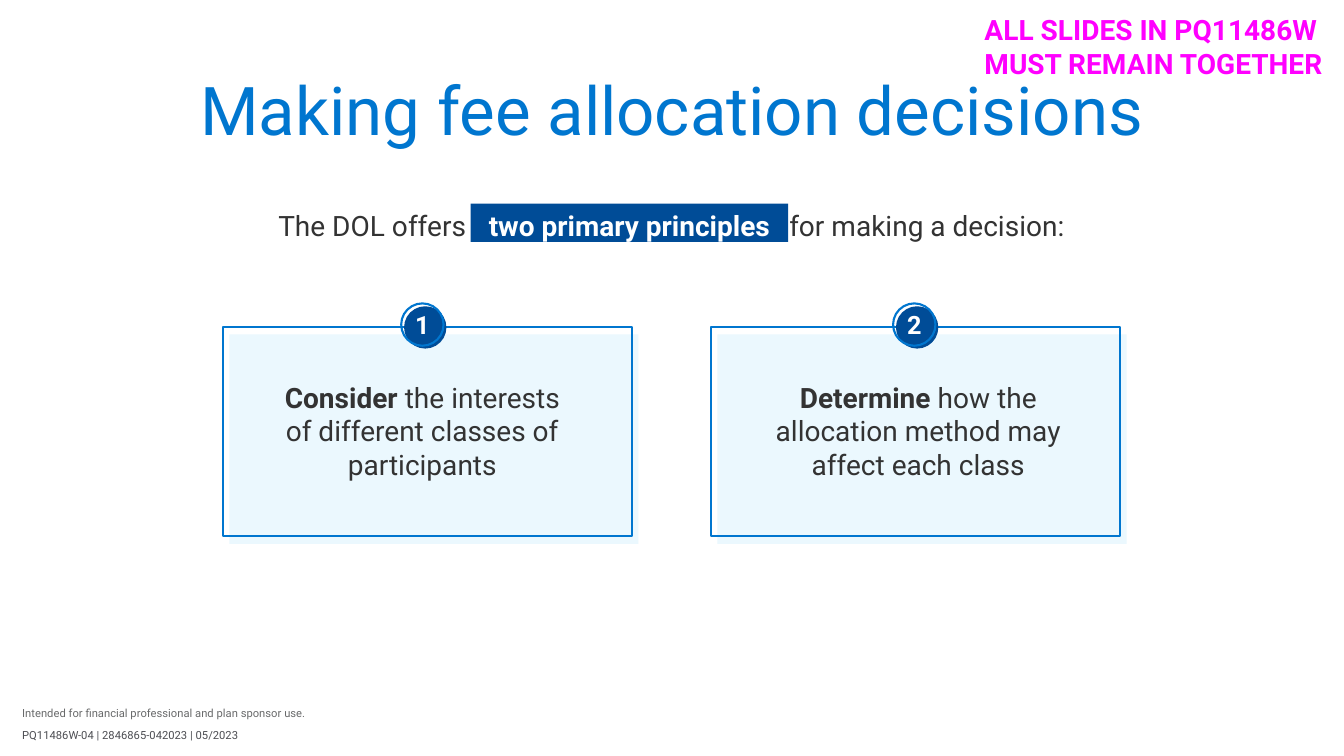
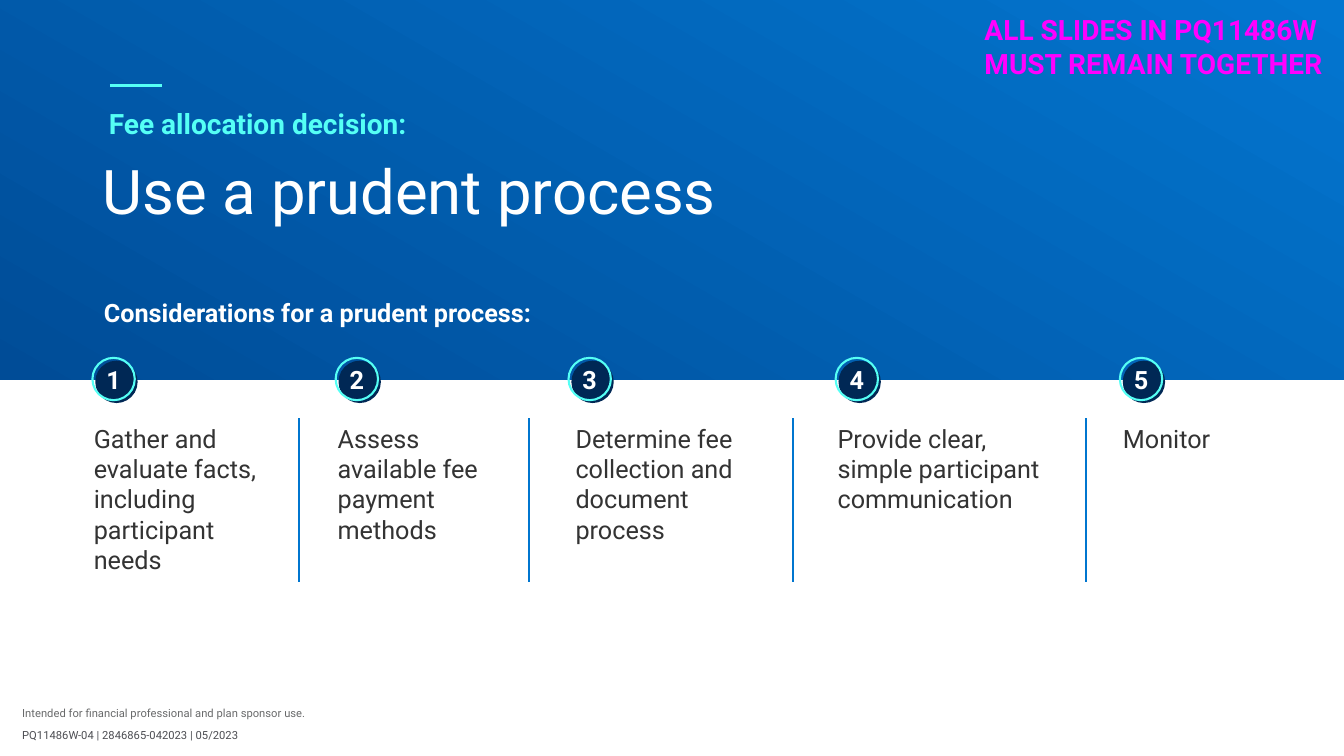
from collections import namedtuple

from lxml.etree import SubElement
from pptx import Presentation
from pptx.dml.color import RGBColor
from pptx.enum.shapes import MSO_CONNECTOR as Connector, MSO_SHAPE as Shape
from pptx.enum.text import MSO_ANCHOR as Anchor, PP_ALIGN as Align
from pptx.oxml.ns import qn
from pptx.util import Inches, Pt

WHITE = RGBColor(0xFF, 0xFF, 0xFF)
INK = RGBColor(0x33, 0x33, 0x33)
GREY = RGBColor(0x69, 0x6A, 0x6B)
SLATE = RGBColor(0x4D, 0x4E, 0x53)
BLUE = RGBColor(0x00, 0x76, 0xCF)
BRIGHT = RGBColor(0x03, 0x76, 0xD0)
DEEP = RGBColor(0x00, 0x4C, 0x97)
NAVY = RGBColor(0x00, 0x28, 0x55)
PALE = RGBColor(0xEB, 0xF8, 0xFE)
AQUA = RGBColor(0x55, 0xFF, 0xF5)
MAGENTA = RGBColor(0xFF, 0x00, 0xFF)

COLUMNS, ROWS = 80, 45
FONT = "Roboto"
NO_INSET = (0, 0, 0, 0)
TEXT_INSET = (0.6, 0.3, 0.6, 0.3)
PHRASE_INSET = (0, 0.3, 0, 0)
BADGE = 2.52

Span = namedtuple("Span", "text bold", defaults=(False,))
Card = namedtuple("Card", "left text_left badge_left verb rest")
Step = namedtuple("Step", "text_left width badge_left text")

CARDS = [
    Card(13.25, 16.08, 23.88, "Consider", " the interests of different classes of participants"),
    Card(42.3, 45.6, 53.16, "Determine", " how the allocation method may affect each class"),
]
STEPS = [
    Step(4.98, 11.58, 5.5, "Gather and evaluate facts, including participant needs"),
    Step(19.5, 11.52, 19.98, "Assess available fee payment methods"),
    Step(33.66, 12.48, 33.84, "Determine fee collection and document process"),
    Step(49.26, 14.1, 49.74, "Provide clear, simple participant communication"),
    Step(66.24, 9.78, 66.66, "Monitor"),
]
DIVIDERS = [17.82, 31.5, 47.22, 64.62]


class Deck:
    def __init__(self):
        self.file = Presentation()
        self.file.slide_width, self.file.slide_height = Inches(13.33), Inches(7.5)
        self.page = None

    def column(self, count):
        return round(self.file.slide_width * count / COLUMNS)

    def row(self, count):
        return round(self.file.slide_height * count / ROWS)

    def place(self, left, top, width, height):
        return self.column(left), self.row(top), self.column(width), self.row(height)

    def add_page(self):
        self.page = self.file.slides.add_slide(self.file.slide_layouts[6])

    def fill_text(self, box, spans, size, color, align=Align.LEFT, anchor=Anchor.TOP,
                  inset=TEXT_INSET, spacing=None):
        frame = box.text_frame
        frame.word_wrap = True
        frame.vertical_anchor = anchor
        frame.margin_left, frame.margin_top = self.column(inset[0]), self.row(inset[1])
        frame.margin_right, frame.margin_bottom = self.column(inset[2]), self.row(inset[3])
        para = frame.paragraphs[0]
        para.alignment = align
        if spacing:
            para.line_spacing = spacing
        for span in spans:
            for number, line in enumerate(span.text.split("\n")):
                if number:
                    para.add_line_break()
                run = para.add_run()
                run.text = line
                run.font.name = FONT
                run.font.size = Pt(size)
                run.font.bold = span.bold
                run.font.color.rgb = color

    def text(self, area, spans, size, color, **style):
        box = self.page.shapes.add_textbox(*self.place(*area))
        self.fill_text(box, spans, size, color, **style)

    def shape(self, kind, area, fill=None, line=None, host=None):
        shape = (host or self.page).shapes.add_shape(kind, *self.place(*area))
        shape.shadow.inherit = False
        if fill is None:
            shape.fill.background()
        else:
            shape.fill.solid()
            shape.fill.fore_color.rgb = fill
        if line is None:
            shape.line.fill.background()
        else:
            shape.line.color.rgb = line
            shape.line.width = Pt(1.5)
        return shape

    def line(self, start, end, color, width=1.5):
        line = self.page.shapes.add_connector(
            Connector.STRAIGHT, self.column(start[0]), self.row(start[1]),
            self.column(end[0]), self.row(end[1]))
        line.line.color.rgb = color
        line.line.width = Pt(width)
        SubElement(line._element.spPr, qn("a:effectLst"))

    def banner(self, height):
        band = self.shape(Shape.RECTANGLE, (0, 0, COLUMNS, height), DEEP)
        band.fill.gradient()
        band.fill.gradient_angle = 60
        for stop, color in zip(band.fill.gradient_stops, (DEEP, BRIGHT)):
            stop.color.rgb = color

    def badge(self, number, left, top, fill, ring):
        group = self.page.shapes.add_group_shape()
        self.shape(Shape.OVAL, (left + 0.17, top + 0.17, BADGE, BADGE), fill, host=group)
        circle = self.shape(Shape.OVAL, (left, top, BADGE, BADGE), line=ring, host=group)
        self.fill_text(circle, [Span(str(number), True)], 18, WHITE,
                       align=Align.CENTER, anchor=Anchor.MIDDLE, inset=NO_INSET)

    def card(self, card, top=19.45, width=24.36, height=12.48):
        self.shape(Shape.RECTANGLE, (card.left + 0.4, top + 0.45, width, height), PALE)
        self.text((card.text_left, top + 3.17, 18.12, 5.52),
                  [Span(card.verb, True), Span(card.rest)], 20, INK,
                  align=Align.CENTER, inset=NO_INSET)
        self.shape(Shape.RECTANGLE, (card.left, top, width, height), line=BLUE)

    def footer_and_stamp(self):
        self.text((0.72, 41.76, 20.46, 1.44),
                  [Span("Intended for financial professional and plan sponsor use.")], 8, GREY)
        self.text((0.72, 42.84, 25.32, 1.8),
                  [Span("PQ11486W-04 | 2846865-042023 | 05/2023")], 8, SLATE,
                  anchor=Anchor.MIDDLE)
        self.text((58, 0.48, 22, 4.62),
                  [Span("ALL SLIDES IN PQ11486W\nMUST REMAIN TOGETHER", True)], 20, MAGENTA)


def principles(deck):
    deck.add_page()
    phrase = dict(anchor=Anchor.MIDDLE, inset=PHRASE_INSET)
    deck.text((10, 12.12, 17.75, 2.28), [Span("The DOL offers")], 20, INK,
              align=Align.RIGHT, **phrase)
    label = deck.shape(Shape.RECTANGLE, (28.02, 12.12, 18.9, 2.28), DEEP)
    deck.fill_text(label, [Span("two primary principles", True)], 20, WHITE,
                   align=Align.CENTER, **phrase)
    deck.text((46.98, 12.12, 20, 2.28), [Span("for making a decision:")], 20, INK, **phrase)
    for card in CARDS:
        deck.card(card)
    for number, card in enumerate(CARDS, 1):
        deck.badge(number, card.badge_left, 18.06, DEEP, BLUE)
    deck.text((0, 4.68, COLUMNS, 4.38), [Span("Making fee allocation decisions")], 48, BLUE,
              align=Align.CENTER, spacing=0.8)
    deck.footer_and_stamp()


def process(deck):
    deck.add_page()
    deck.banner(22.62)
    deck.line((6.54, 5.1), (9.66, 5.1), AQUA, 2)
    deck.text((5.88, 6.06, 26.5, 2.64), [Span("Fee allocation decision:", True)], 20, AQUA)
    deck.text((5.52, 8.82, 43, 5.22), [Span("Use a prudent process")], 44, WHITE)
    deck.text((5.58, 17.4, 35.16, 3.18),
              [Span("Considerations for a prudent process:", True)], 18, WHITE)
    for number, step in enumerate(STEPS, 1):
        deck.text((step.text_left, 24.9, step.width, 9.72), [Span(step.text)], 18, INK)
        deck.badge(number, step.badge_left, 21.3, NAVY, AQUA)
    for left in DIVIDERS:
        deck.line((left, 34.62), (left, 24.9), BLUE)
    deck.footer_and_stamp()


def main():
    deck = Deck()
    principles(deck)
    process(deck)
    deck.file.save("out.pptx")


if __name__ == "__main__":
    main()
